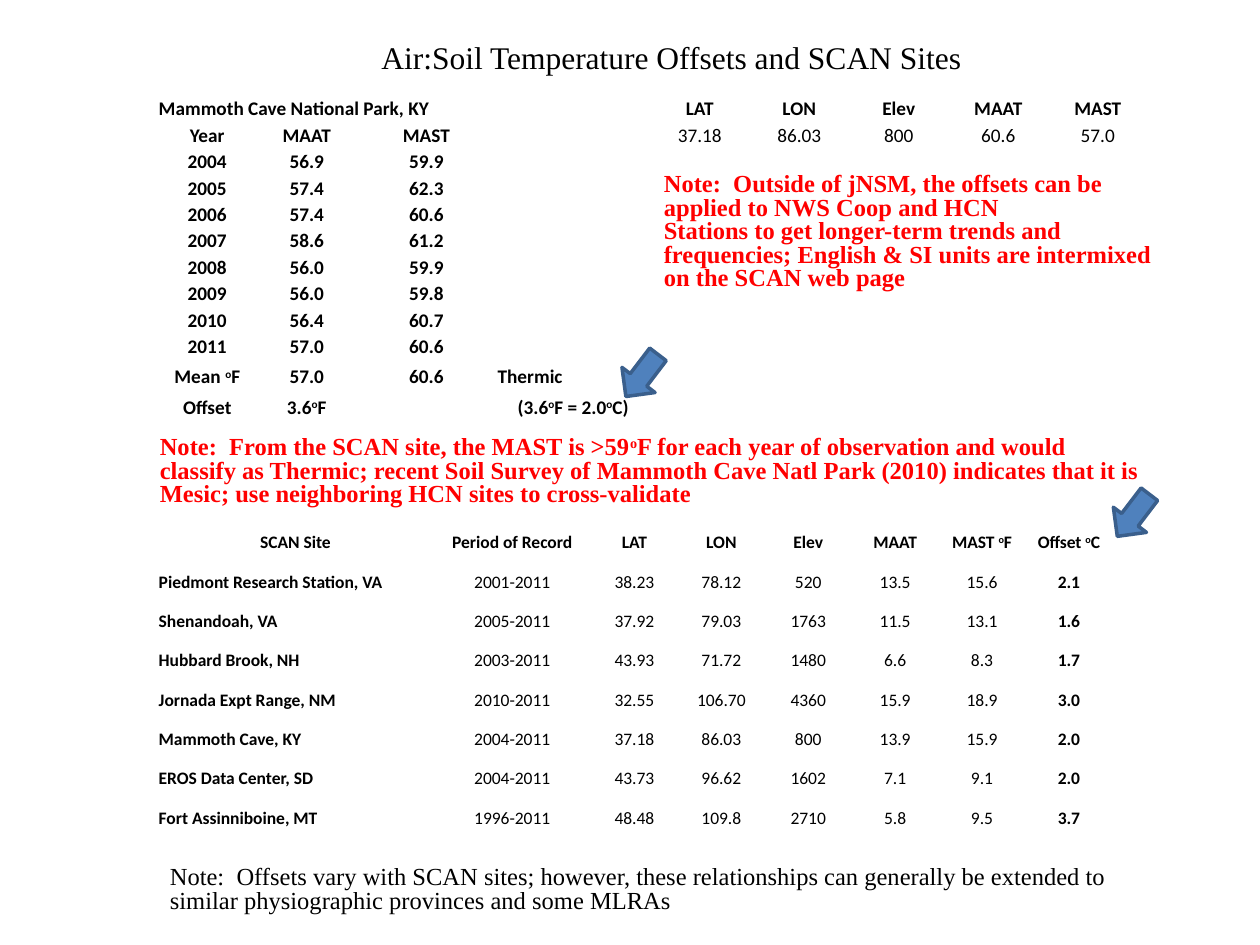
from dataclasses import dataclass

from pptx import Presentation
from pptx.dml.color import RGBColor as RGB
from pptx.enum.shapes import MSO_SHAPE as Shape
from pptx.enum.text import MSO_ANCHOR as Anchor, MSO_AUTO_SIZE as AutoSize, PP_ALIGN as Align
from pptx.oxml.xmlchemy import OxmlElement
from pptx.util import Inches, Pt


@dataclass(frozen=True)
class Theme:
    ink: RGB = RGB(0x00, 0x00, 0x00)
    alert: RGB = RGB(0xFF, 0x00, 0x00)
    arrow_fill: RGB = RGB(0x4F, 0x81, 0xBD)
    arrow_line: RGB = RGB(0x3A, 0x5F, 0x8C)
    prose_font: str = "Times New Roman"
    table_font: str = "Calibri"
    title_size: int = 18
    note_size: int = 14
    annual_size: int = 11
    sites_size: int = 10


def apply(target, values):
    for name, value in values.items():
        setattr(target, name, value)


class SlideBuilder:
    def __init__(self, slide, theme):
        self.slide = slide
        self.theme = theme

    def add_runs(self, paragraph, text, font):
        """Add text; pieces between carets are raised."""
        for index, piece in enumerate(text.split("^")):
            run = paragraph.add_run()
            run.text = piece
            apply(run.font, {name: value for name, value in font.items() if name != "color"})
            run.font.color.rgb = font["color"]
            if index % 2:
                run.font._element.set("baseline", "30000")

    def title(self, text, box):
        heading = self.slide.shapes.title
        apply(heading, dict(zip(("left", "top", "width", "height"), map(Inches, box))))
        apply(heading.text_frame, {"vertical_anchor": Anchor.TOP, "word_wrap": True,
                                   "auto_size": AutoSize.SHAPE_TO_FIT_TEXT})
        paragraph = heading.text_frame.paragraphs[0]
        paragraph.alignment = Align.CENTER
        self.add_runs(paragraph, text, {"name": self.theme.prose_font, "bold": False,
                                        "size": Pt(self.theme.title_size), "color": self.theme.ink})

    def note(self, lines, box, color, bold):
        frame = self.slide.shapes.add_textbox(*map(Inches, box)).text_frame
        apply(frame, {"word_wrap": True, "auto_size": AutoSize.SHAPE_TO_FIT_TEXT})
        for index, line in enumerate(lines):
            paragraph = frame.add_paragraph() if index else frame.paragraphs[0]
            paragraph.line_spacing = 0.8
            self.add_runs(paragraph, line, {"name": self.theme.prose_font, "bold": bold,
                                            "size": Pt(self.theme.note_size), "color": color})

    def table(self, rows, left, top, widths, heights, size, is_bold, is_left):
        grid = self.slide.shapes.add_table(
            len(rows), len(widths), Inches(left), Inches(top),
            Inches(sum(widths)), Inches(sum(heights))).table
        apply(grid, {"first_row": False, "horz_banding": False})
        for column, width in zip(grid.columns, widths):
            column.width = Inches(width)
        for row, height in zip(grid.rows, heights):
            row.height = Inches(height)
        margin = Inches(0.01)
        for r, row in enumerate(rows):
            for c in range(len(widths)):
                cell = grid.cell(r, c)
                apply(cell, {"vertical_anchor": Anchor.BOTTOM, "margin_left": margin,
                             "margin_right": margin, "margin_top": margin, "margin_bottom": 0})
                cell.fill.background()
                paragraph = cell.text_frame.paragraphs[0]
                text = row[c] if c < len(row) else ""
                if text:
                    paragraph.alignment = Align.LEFT if is_left(r, c) else Align.CENTER
                    self.add_runs(paragraph, text, {"name": self.theme.table_font, "size": Pt(size),
                                                    "bold": is_bold(r, c), "color": self.theme.ink})
                else:
                    # Small type keeps a blank cell from stretching its row
                    end = OxmlElement("a:endParaRPr")
                    end.set("sz", str(size * 100))
                    paragraph._p.append(end)
        return grid

    def arrow(self, left, top):
        pointer = self.slide.shapes.add_shape(
            Shape.DOWN_ARROW, Inches(left), Inches(top), Inches(0.33), Inches(0.42))
        pointer.rotation = 37.3
        pointer.shadow.inherit = False
        pointer.fill.solid()
        pointer.fill.fore_color.rgb = self.theme.arrow_fill
        pointer.line.color.rgb = self.theme.arrow_line
        pointer.line.width = Pt(2)


ANNUAL = [
    ["Mammoth Cave National Park, KY", "", "", "", "LAT", "LON", "Elev", "MAAT", "MAST"],
    ["Year", "MAAT", "MAST", "", "37.18", "86.03", "800", "60.6", "57.0"],
    ["2004", "56.9", "59.9"],
    ["2005", "57.4", "62.3"],
    ["2006", "57.4", "60.6"],
    ["2007", "58.6", "61.2"],
    ["2008", "56.0", "59.9"],
    ["2009", "56.0", "59.8"],
    ["2010", "56.4", "60.7"],
    ["2011", "57.0", "60.6"],
    ["Mean ^o^F", "57.0", "60.6", "Thermic"],
    ["Offset", "3.6^o^F", "", "(3.6^o^F = 2.0^o^C)"],
]

SITES = [
    ["SCAN Site", "Period of Record", "LAT", "LON", "Elev", "MAAT", "MAST ^o^F", "Offset ^o^C"],
    ["Piedmont Research Station, VA", "2001-2011", "38.23", "78.12", "520", "13.5", "15.6", "2.1"],
    ["Shenandoah, VA", "2005-2011", "37.92", "79.03", "1763", "11.5", "13.1", "1.6"],
    ["Hubbard Brook, NH", "2003-2011", "43.93", "71.72", "1480", "6.6", "8.3", "1.7"],
    ["Jornada Expt Range, NM", "2010-2011", "32.55", "106.70", "4360", "15.9", "18.9", "3.0"],
    ["Mammoth Cave, KY", "2004-2011", "37.18", "86.03", "800", "13.9", "15.9", "2.0"],
    ["EROS Data Center, SD", "2004-2011", "43.73", "96.62", "1602", "7.1", "9.1", "2.0"],
    ["Fort Assinniboine, MT", "1996-2011", "48.48", "109.8", "2710", "5.8", "9.5", "3.7"],
]


def main():
    deck = Presentation()
    apply(deck, {"slide_width": Inches(10), "slide_height": Inches(7.5)})
    theme = Theme()
    page = SlideBuilder(deck.slides.add_slide(deck.slide_layouts[5]), theme)

    # Yearly temperatures at Mammoth Cave, with the station facts at right
    annual = page.table(
        ANNUAL, 1.25, 0.75, [0.79, 0.79, 1.11, 1.22] + [0.79] * 5, [0.21] * 10 + [0.24] * 2,
        theme.annual_size,
        is_bold=lambda r, c: not (r == 1 and c > 3),
        is_left=lambda r, c: (r, c) in ((0, 0), (10, 3)))
    annual.cell(0, 0).merge(annual.cell(0, 2))

    # Offsets by SCAN site
    page.table(
        SITES, 1.25, 4.08, [2.19, 1.25] + [0.69] * 6, [2.5 / len(SITES)] * len(SITES),
        theme.sites_size,
        is_bold=lambda r, c: r == 0 or c in (0, 7),
        is_left=lambda r, c: r > 0 and c == 0)

    # Title and notes
    page.title("Air:Soil Temperature Offsets and SCAN Sites", (1.58, 0.25, 7.5, 0.4))
    page.note(["Note:  From the SCAN site, the MAST is >59^o^F for each year of observation and "
               "would classify as Thermic; recent Soil Survey of Mammoth Cave Natl Park (2010) "
               "indicates that it is Mesic; use neighboring HCN sites to cross-validate"],
              (1.17, 3.42, 8, 0.67), theme.alert, bold=True)
    page.note(["Note:  Offsets vary with SCAN sites; however, these relationships can generally "
               "be extended to similar physiographic provinces and some MLRAs"],
              (1.25, 6.83, 7.67, 0.49), theme.ink, bold=False)
    page.note(["Note:  Outside of jNSM, the offsets can be applied to NWS Coop and HCN",
               "Stations to get longer-term trends and frequencies; English & SI units are "
               "intermixed on the SCAN web page"],
              (5.17, 1.33, 4.08, 1.04), theme.alert, bold=True)

    # Arrows pointing at the offsets
    for left, top in ((4.93, 2.77), (8.83, 3.88)):
        page.arrow(left, top)

    deck.save("out.pptx")


if __name__ == "__main__":
    main()
